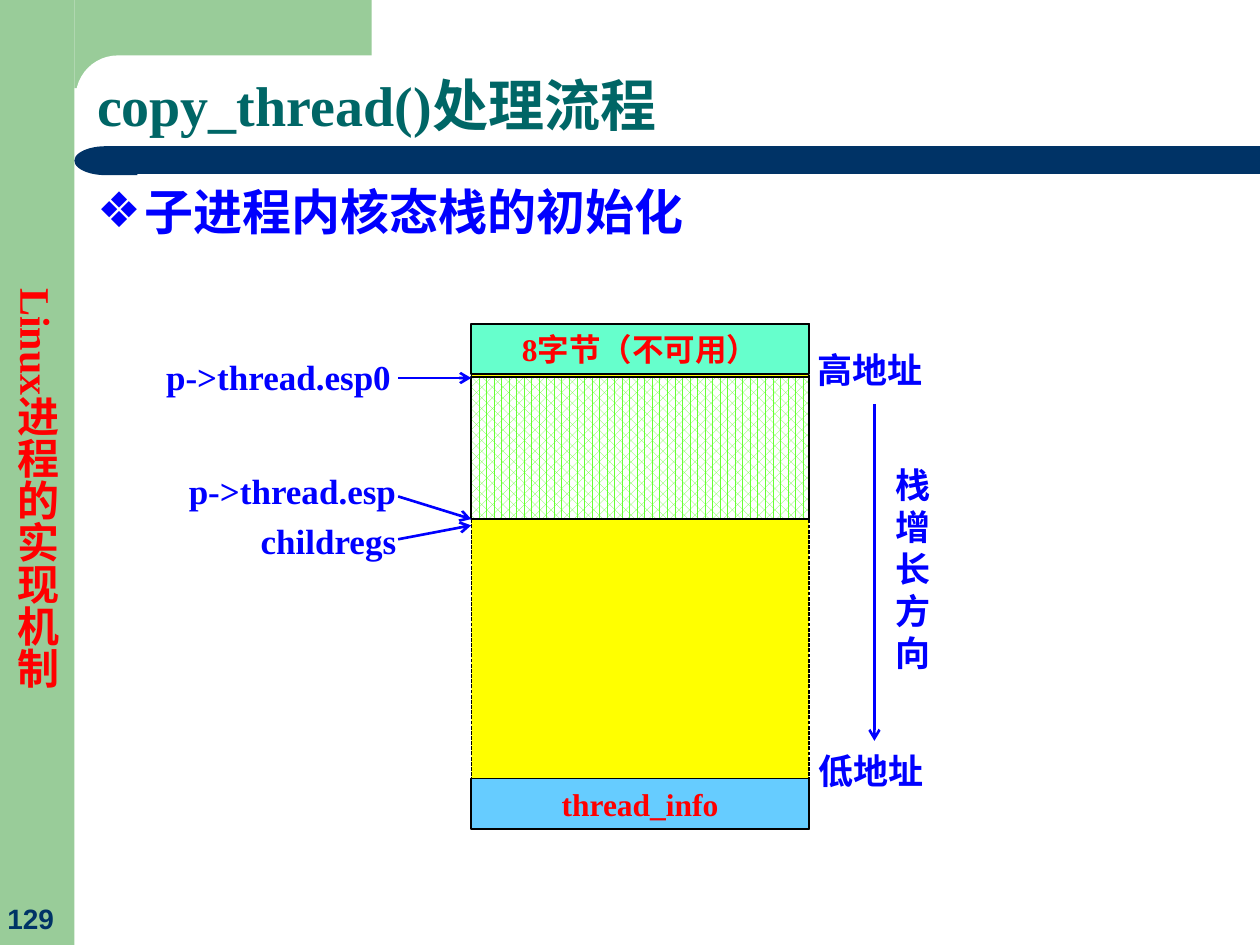
from dataclasses import dataclass
from typing import Optional

import lxml.etree
import pptx
import pptx.dml.color
import pptx.enum.dml
import pptx.enum.shapes
import pptx.enum.text
import pptx.oxml.ns
import pptx.util

SHAPE = pptx.enum.shapes.MSO_SHAPE
ANCHOR = pptx.enum.text.MSO_ANCHOR
ALIGN = pptx.enum.text.PP_ALIGN
qn = pptx.oxml.ns.qn

COLORS = {
    "white": "FFFFFF", "black": "000000", "sage": "99CC99", "navy": "003366",
    "teal": "006666", "blue": "0000FF", "red": "FF0000", "yellow": "FFFF00",
    "mint": "66FFCC", "sky": "66CCFF", "green": "66FF33",
}
# The slide is a grid of 100 columns by 75 rows
COLUMNS, ROWS = 100, 75
CELL = pptx.util.Inches(0.1)
STACK_LEFT, STACK_WIDTH = 37.4, 26.8
STACK_TOP, STACK_HEIGHT = 25.7, 40.1
CAP_HEIGHT = 4
POINTER_START = 31.6


@dataclass
class Block:
    left: float
    top: float
    width: float
    height: float
    fill: str
    kind: SHAPE = SHAPE.RECTANGLE
    corner: Optional[float] = None
    turn: int = 0
    line: Optional[str] = None
    line_width: float = 1
    dashed: bool = False
    pattern: bool = False
    text: str = ""


@dataclass
class Label:
    text: str
    left: float
    top: float
    width: float
    height: float = 4.4
    wrap: bool = False


@dataclass
class Arrow:
    x1: float
    y1: float
    x2: float
    y2: float


def rgb(name: str):
    return pptx.dml.color.RGBColor.from_string(COLORS[name])


def cells(*counts: float) -> list:
    return [round(count * CELL) for count in counts]


def write(frame, text: str, *, size: float, color: str, font="Times New Roman",
          align=ALIGN.LEFT, anchor=ANCHOR.TOP, wrap=True, spacing=1.0,
          bullet: Optional[str] = None, indent=0.38) -> None:
    frame.word_wrap = wrap
    frame.auto_size = pptx.enum.text.MSO_AUTO_SIZE.NONE
    frame.vertical_anchor = anchor
    paragraph = frame.paragraphs[0]
    paragraph.alignment = align
    paragraph.line_spacing = spacing
    paragraph.space_before = pptx.util.Pt(0)
    if bullet:
        properties = paragraph._p.get_or_add_pPr()
        properties.set("marL", str(pptx.util.Inches(indent)))
        properties.set("indent", str(-pptx.util.Inches(indent)))
        tint = lxml.etree.SubElement(properties, qn("a:buClr"))
        lxml.etree.SubElement(tint, qn("a:srgbClr")).set("val", COLORS[color])
        lxml.etree.SubElement(properties, qn("a:buChar")).set("char", bullet)
    run = paragraph.add_run()
    run.text = text
    run.font.name = font
    run.font.size = pptx.util.Pt(size)
    run.font.bold = True
    run.font.color.rgb = rgb(color)


def draw_block(slide, block: Block) -> None:
    shape = slide.shapes.add_shape(
        block.kind, *cells(block.left, block.top, block.width, block.height))
    shape.shadow.inherit = False
    shape.rotation = block.turn
    if block.corner is not None:
        shape.adjustments[0] = block.corner
    if block.pattern:
        shape.fill.patterned()
        shape.fill.pattern = pptx.enum.dml.MSO_PATTERN.PERCENT_60
        shape.fill.fore_color.rgb = rgb(block.fill)
        shape.fill.back_color.rgb = rgb("white")
    else:
        shape.fill.solid()
        shape.fill.fore_color.rgb = rgb(block.fill)
    if block.line:
        shape.line.color.rgb = rgb(block.line)
        shape.line.width = pptx.util.Pt(block.line_width)
        if block.dashed:
            shape.line.dash_style = pptx.enum.dml.MSO_LINE.SQUARE_DOT
    else:
        shape.line.fill.background()
    if block.text:
        write(shape.text_frame, block.text, size=18, color="red", align=ALIGN.CENTER)


def draw_label(slide, label: Label) -> None:
    box = slide.shapes.add_textbox(
        *cells(label.left, label.top, label.width, label.height))
    write(box.text_frame, label.text, size=20, color="blue", wrap=label.wrap)


def draw_arrow(slide, arrow: Arrow) -> None:
    connector = slide.shapes.add_connector(
        pptx.enum.shapes.MSO_CONNECTOR.STRAIGHT,
        *cells(arrow.x1, arrow.y1, arrow.x2, arrow.y2))
    connector.line.color.rgb = rgb("blue")
    connector.line.width = pptx.util.Pt(1.5)
    lxml.etree.SubElement(connector.line._get_or_add_ln(), qn("a:tailEnd")).set("type", "arrow")
    lxml.etree.SubElement(connector._element.spPr, qn("a:effectLst"))


def place(slide, placeholder, *area: float):
    """Move a placeholder and bring it in front of the frame."""
    placeholder.left, placeholder.top, placeholder.width, placeholder.height = cells(*area)
    slide.shapes._spTree.append(placeholder._element)
    return placeholder.text_frame


def stack_block(top: float, height: float, fill: str, **style) -> Block:
    return Block(STACK_LEFT, top, STACK_WIDTH, height, fill, line="black", **style)


FRAME = [
    Block(0, 0, 5.9, ROWS, "sage"),
    Block(5.9, -0.1, 23.6, 7.1, "sage"),
    Block(6, 4.4, 55.8, 6.7, "white", SHAPE.ROUNDED_RECTANGLE, corner=0.5),
    Block(10.8, 11.6, COLUMNS - 10.8, 2.2, "navy", SHAPE.ROUNDED_RECTANGLE, corner=0),
    Block(5.9, 11.6, 5, 2.3, "navy", SHAPE.FLOWCHART_DELAY, turn=180),
]
STACK = [
    stack_block(STACK_TOP, STACK_HEIGHT, "yellow", line_width=0.75, dashed=True),
    stack_block(STACK_TOP, CAP_HEIGHT, "mint", text="8字节（不可用）"),
    stack_block(STACK_TOP + STACK_HEIGHT - CAP_HEIGHT, CAP_HEIGHT, "sky", text="thread_info"),
    stack_block(29.9, 11.3, "green", pattern=True),
]
LABELS = [
    Label("p->thread.esp0", 12.2, 27.7, 20),
    Label("p->thread.esp", 14, 36.8, 18.6),
    Label("childregs", 19.7, 40.7, 12.9),
    Label("高地址", 63.9, 27.2, 10.5),
    Label("低地址", 64, 59, 10.5),
    Label("栈增长方向", 70.1, 36.3, 4.6, 17.8, wrap=True),
]
ARROWS = [Arrow(POINTER_START, start, STACK_LEFT, end)
          for start, end in ((30, 30), (39.4, 41.2), (42.8, 41.7))]
ARROWS.append(Arrow(69.4, 32.1, 69.4, 58.8))  # direction of stack growth


def main() -> None:
    deck = pptx.Presentation()
    deck.slide_width, deck.slide_height = cells(COLUMNS, ROWS)
    slide = deck.slides.add_slide(deck.slide_layouts[1])

    # Coloured frame
    for block in FRAME:
        draw_block(slide, block)

    # Title and list
    title = place(slide, slide.shapes.title, 6.7, 4.4, 91.4, 7.1)
    write(title, "copy_thread()处理流程", size=32, color="teal",
          anchor=ANCHOR.BOTTOM, spacing=0.9)
    body = place(slide, slide.placeholders[1], 6.7, 13.9, 93.3, 59.6)
    write(body, "子进程内核态栈的初始化", size=28, color="blue", bullet="❖")

    # Page number and chapter name in the side band
    page = slide.shapes.add_textbox(*cells(-0.4, 71, 6.4, 3.7))
    write(page.text_frame, "129", size=16, color="navy", font="Arial", anchor=ANCHOR.BOTTOM)
    chapter = slide.shapes.add_textbox(*cells(0.4, 21.9, 5.5, 42.4))
    write(chapter.text_frame, "Linux进程的实现机制", size=24, color="red",
          align=ALIGN.CENTER, anchor=ANCHOR.BOTTOM, spacing=0.9)
    chapter.text_frame._txBody.bodyPr.set("vert", "eaVert")

    # Kernel stack with its pointers
    for block in STACK:
        draw_block(slide, block)
    for arrow in ARROWS:
        draw_arrow(slide, arrow)
    for label in LABELS:
        draw_label(slide, label)

    deck.save("out.pptx")


if __name__ == "__main__":
    main()
